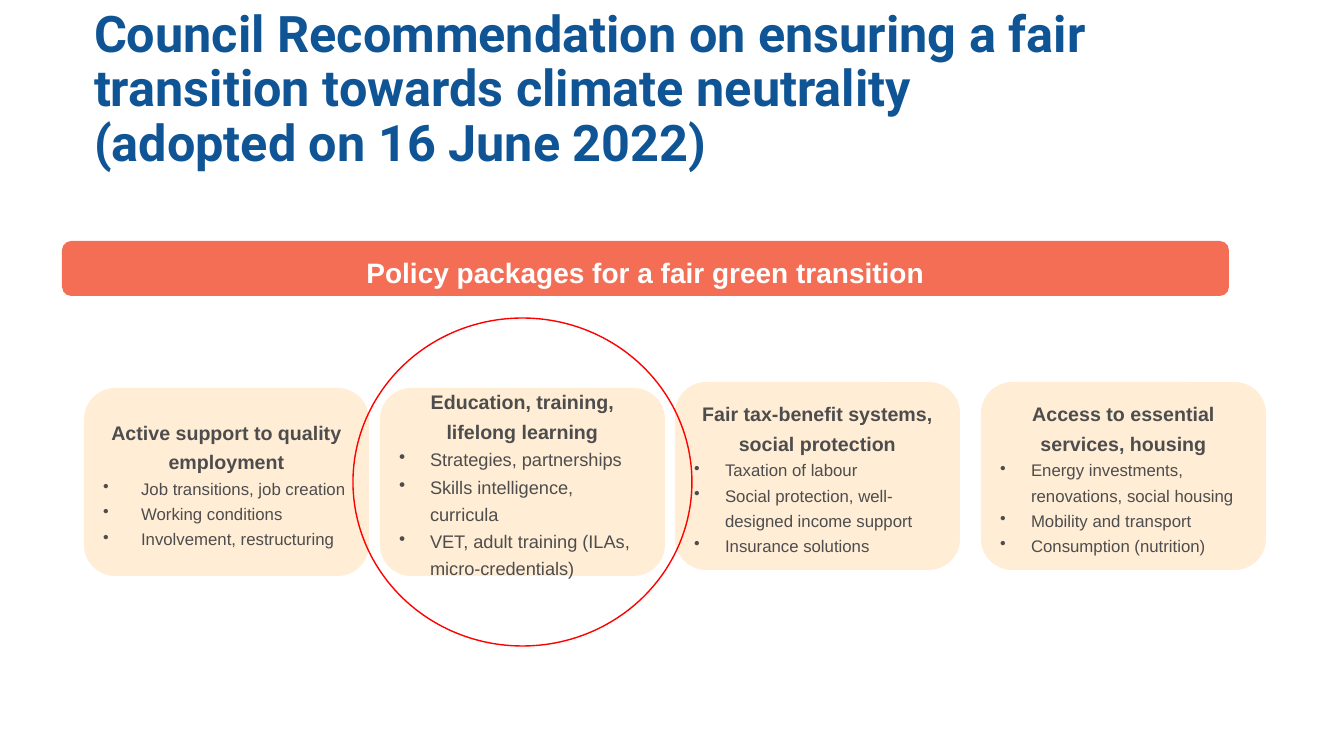
"""Build the slide on policy packages for a fair green transition."""
import dataclasses

import pptx
import pptx.dml.color
import pptx.enum.shapes
import pptx.enum.text
import pptx.oxml
import pptx.oxml.ns
import pptx.util

EMU_PER_PX = 914400 / 100.8
SHAPE = pptx.enum.shapes.MSO_SHAPE
ALIGN = pptx.enum.text.PP_ALIGN
ANCHOR = pptx.enum.text.MSO_ANCHOR


@dataclasses.dataclass(frozen=True)
class Theme:
    """Colours, fonts and type sizes of the slide."""
    title_blue: str = "0F5494"
    banner_coral: str = "F36E55"
    card_cream: str = "FFEDD5"
    text_grey: str = "4D4D4D"
    white: str = "FFFFFF"
    ring_red: str = "FF0000"
    title_font: str = "Roboto"
    body_font: str = "Arial"
    title_size: int = 36
    banner_size: int = 20
    heading_size: int = 14
    line_spacing: float = 1.25


THEME = Theme()
CARD_SIZE = (285, 188)
CARDS = [
    {"at": (84, 388), "size": 12, "indent": 38,
     "heading": "Active support to quality employment",
     "items": ["Job transitions, job creation", "Working conditions",
               "Involvement, restructuring"]},
    {"at": (380, 388), "size": 13, "indent": 31,
     "heading": "Education, training, lifelong learning",
     "items": ["Strategies, partnerships", "Skills intelligence, curricula",
               "VET, adult training (ILAs, micro-credentials)"]},
    {"at": (675, 382), "size": 12, "indent": 31,
     "heading": "Fair tax-benefit systems, social protection",
     "items": ["Taxation of labour",
               "Social protection, well-designed income support",
               "Insurance solutions"]},
    {"at": (981, 382), "size": 12, "indent": 31,
     "heading": "Access to essential services, housing",
     "items": ["Energy investments, renovations, social housing",
               "Mobility and transport", "Consumption (nutrition)"]},
]


def px(length):
    """Turn whole pixels into EMU."""
    return pptx.util.Emu(round(length * EMU_PER_PX))


def rgb(code):
    """Turn a hex code into a colour."""
    return pptx.dml.color.RGBColor.from_string(code)


def apply(target, formats):
    """Set every attribute named in a dict of format values."""
    for name, value in formats.items():
        setattr(target, name, value)


def add_span(para, text, size, colour, bold=True, font=THEME.body_font):
    """Add one formatted run to a paragraph."""
    span = para.add_run()
    span.text = text
    apply(span.font, {"name": font, "size": pptx.util.Pt(size), "bold": bold})
    span.font.color.rgb = rgb(colour)


def format_para(para, alignment, line_spacing=THEME.line_spacing):
    """Set alignment and spacing of a paragraph."""
    apply(para, {"alignment": alignment, "line_spacing": line_spacing,
                 "space_before": pptx.util.Pt(0),
                 "space_after": pptx.util.Pt(0)})


def add_bullet(para, indent):
    """Give a paragraph a round bullet with a hanging indent."""
    properties = para._p.get_or_add_pPr()
    properties.set("marL", str(px(indent)))
    properties.set("indent", str(-px(indent)))
    bullet = pptx.oxml.parse_xml(
        f'<a:buChar {pptx.oxml.ns.nsdecls("a")} char="•"/>')
    properties.append(bullet)


def add_title(page, text):
    """Place and fill the title placeholder."""
    title = page.shapes.title
    apply(title, {"left": px(84), "top": px(76),
                  "width": px(1026), "height": px(96)})
    frame = title.text_frame
    apply(frame, {"auto_size": pptx.enum.text.MSO_AUTO_SIZE.NONE,
                  "word_wrap": True, "vertical_anchor": ANCHOR.BOTTOM,
                  "margin_left": px(10), "margin_right": px(10),
                  "margin_top": px(5), "margin_bottom": px(0)})
    para = frame.paragraphs[0]
    format_para(para, ALIGN.LEFT, 0.9)
    add_span(para, text, THEME.title_size, THEME.title_blue,
             font=THEME.title_font)


def add_panel(page, place, fill, heading, size, colour):
    """Add a rounded panel with a centred bold heading."""
    panel = page.shapes.add_shape(SHAPE.ROUNDED_RECTANGLE, *map(px, place))
    panel.shadow.inherit = False
    panel.fill.solid()
    panel.fill.fore_color.rgb = rgb(fill)
    panel.line.fill.background()
    frame = panel.text_frame
    apply(frame, {"word_wrap": True, "vertical_anchor": ANCHOR.MIDDLE})
    para = frame.paragraphs[0]
    format_para(para, ALIGN.CENTER)
    add_span(para, heading, size, colour)
    return frame


def add_card(page, card):
    """Add a policy card with its heading and bullet list."""
    frame = add_panel(page, card["at"] + CARD_SIZE, THEME.card_cream,
                      card["heading"], THEME.heading_size, THEME.text_grey)
    for item in card["items"]:
        para = frame.add_paragraph()
        add_bullet(para, card["indent"])
        format_para(para, ALIGN.LEFT)
        add_span(para, item, card["size"], THEME.text_grey, bold=False)


def add_ring(page, place):
    """Add an outlined ellipse that highlights a card."""
    ring = page.shapes.add_shape(SHAPE.OVAL, *map(px, place))
    ring.shadow.inherit = False
    ring.fill.background()
    ring.line.color.rgb = rgb(THEME.ring_red)
    ring.line.width = pptx.util.Pt(1)


def main():
    """Build and save the deck."""
    deck = pptx.Presentation()
    apply(deck, {"slide_width": px(1344), "slide_height": px(756)})
    page = deck.slides.add_slide(deck.slide_layouts.get_by_name("Title Only"))
    add_title(page, "Council Recommendation on ensuring a fair transition "
                    "towards climate neutrality (adopted on 16 June 2022)")
    add_panel(page, (62, 241, 1167, 55), THEME.banner_coral,
              "Policy packages for a fair green transition",
              THEME.banner_size, THEME.white)
    for card in CARDS:
        add_card(page, card)
    add_ring(page, (353, 318, 339, 328))
    deck.save("out.pptx")


if __name__ == "__main__":
    main()
